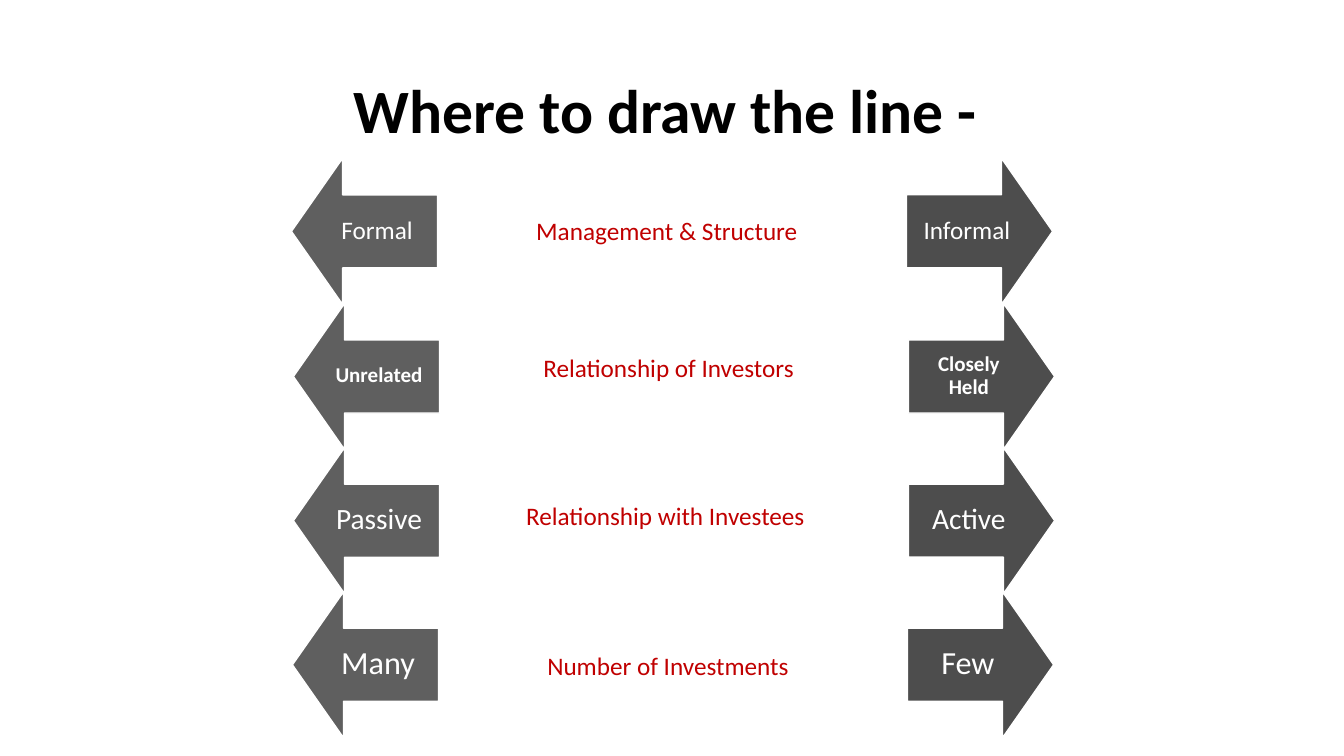
from pptx import Presentation
from pptx.dml.color import RGBColor
from pptx.enum import shapes, text
from pptx.util import Inches, Pt

COLORS = {
    "title": "000000",
    "left": "5F5F5F",
    "right": "4D4D4D",
    "white": "FFFFFF",
    "topic": "C00000",
}
FONT = "Calibri"
ARROW = 1.45
ROWS = [
    ("Formal", "Informal", 18, False, 2.89, 1.57,
     "Management & Structure", 5.22, 2.09, 2.9),
    ("Unrelated", "Closely Held", 15, True, 2.91, 3.01,
     "Relationship of Investors", 5.29, 3.45, 2.78),
    ("Passive", "Active", 21, False, 2.91, 4.44,
     "Relationship with Investees", 5.12, 4.91, 3.09),
    ("Many", "Few", 23, False, 2.9, 5.87,
     "Number of Investments", 5.33, 6.4, 2.7),
]


def format_text(text_frame, words, size, color, bold=False):
    """Write words into a text frame and return the formatted paragraph."""
    text_frame.text = words
    text_frame.word_wrap = True
    paragraph = text_frame.paragraphs[0]
    for run in paragraph.runs:
        run.font.name = FONT
        run.font.size = Pt(size)
        run.font.bold = bold
        run.font.color.rgb = RGBColor.from_string(COLORS[color])
    return paragraph


def add_title(slide, left, top, width, height):
    """Place and format the title placeholder."""
    title = slide.shapes.title
    title.left, title.top = Inches(left), Inches(top)
    title.width, title.height = Inches(width), Inches(height)
    title.text_frame.vertical_anchor = text.MSO_ANCHOR.MIDDLE
    paragraph = format_text(title.text_frame, "Where to draw the line - ", 44, "title", True)
    paragraph.alignment = text.PP_ALIGN.CENTER
    paragraph.line_spacing = 0.9


def add_arrow(group, side, left, top, label, size, bold):
    """Draw one sideways arrow with its label over the shaft."""
    arrow = group.shapes.add_shape(
        shapes.MSO_SHAPE.UP_ARROW, Inches(left), Inches(top), Inches(ARROW), Inches(ARROW))
    arrow.rotation = 270 if side == "left" else 90
    arrow.adjustments[0], arrow.adjustments[1] = 0.5, 0.35
    arrow.shadow.inherit = False
    arrow.fill.solid()
    arrow.fill.fore_color.rgb = RGBColor.from_string(COLORS[side])
    arrow.line.color.rgb = RGBColor.from_string(COLORS["white"])
    arrow.line.width = Pt(1)

    label_left = left + (0.25 if side == "left" else 0)
    box = group.shapes.add_textbox(
        Inches(label_left), Inches(top + 0.36), Inches(1.2), Inches(0.72))
    frame = box.text_frame
    inset = Inches(round(size / 128, 2))
    frame.margin_left = frame.margin_right = inset
    frame.margin_top = frame.margin_bottom = inset
    frame.vertical_anchor = text.MSO_ANCHOR.MIDDLE
    paragraph = format_text(frame, label, size, "white", bold)
    paragraph.alignment = text.PP_ALIGN.CENTER
    paragraph.line_spacing = 0.9


def add_topic(slide, left, top, width, words):
    """Write the topic between a pair of arrows."""
    box = slide.shapes.add_textbox(Inches(left), Inches(top), Inches(width), Inches(0.4))
    format_text(box.text_frame, words, 18, "topic")
    box.text_frame.word_wrap = False
    box.text_frame.auto_size = text.MSO_AUTO_SIZE.SHAPE_TO_FIT_TEXT


def add_row(slide, row):
    """Build one pair of opposing arrows and its topic."""
    left_label, right_label, size, bold, left, top, topic, topic_left, topic_top, width = row
    group = slide.shapes.add_group_shape()
    add_arrow(group, "left", left, top, left_label, size, bold)
    add_arrow(group, "right", left + 6.1, top, right_label, size, bold)
    add_topic(slide, topic_left, topic_top, width, topic)


def main():
    """Build and save the presentation."""
    presentation = Presentation()
    presentation.slide_width, presentation.slide_height = Inches(13.33), Inches(7.5)
    slide = presentation.slides.add_slide(presentation.slide_layouts[5])
    add_title(slide, 0.92, 0.4, 11.5, 1.45)
    for row in ROWS:
        add_row(slide, row)
    presentation.save("out.pptx")


if __name__ == "__main__":
    main()
